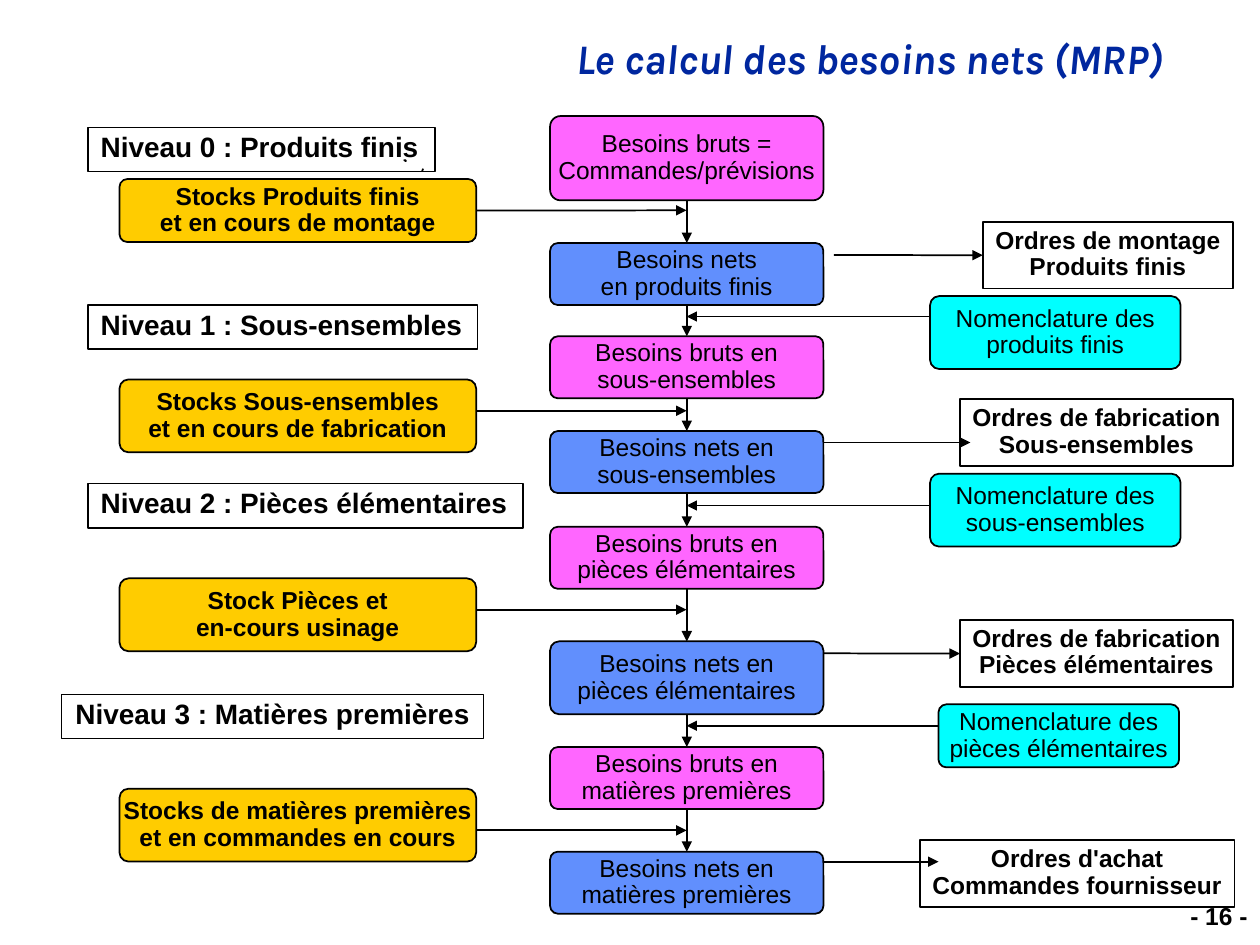
from dataclasses import dataclass
from itertools import pairwise
from typing import NamedTuple, Optional

from pptx import Presentation
from pptx.dml.color import RGBColor
from pptx.enum.shapes import MSO_CONNECTOR, MSO_SHAPE
from pptx.enum.text import MSO_ANCHOR, MSO_AUTO_SIZE, PP_ALIGN
from pptx.oxml.ns import qn
from pptx.shapes.autoshape import Shape
from pptx.shapes.connector import Connector
from pptx.slide import Slide
from pptx.text.text import TextFrame
from pptx.util import Cm, Pt
from lxml.etree import SubElement

BLACK = RGBColor(0, 0, 0)
NAVY = RGBColor(0x00, 0x27, 0x9F)
PINK = RGBColor(0xFF, 0x66, 0xFF)
BLUE = RGBColor(0x61, 0x8F, 0xFD)
GOLD = RGBColor(0xFF, 0xCC, 0x00)
CYAN = RGBColor(0x00, 0xFF, 0xFF)

TOP, LEFT, BOTTOM, RIGHT = range(4)
CHAIN_LEFT, CHAIN_WIDTH = 11.09, 5.51
CHAIN_MIDDLE = 13.84
CHAIN_RIGHT = 16.6
STOCK_LEFT, STOCK_WIDTH = 2.41, 7.19
JOIN_TOLERANCE = 0.02


@dataclass(frozen=True)
class Style:
    fill: Optional[RGBColor] = None
    size: int = 14
    bold: bool = False
    align: PP_ALIGN = PP_ALIGN.CENTER


GROSS = Style(PINK)
NET = Style(BLUE)
STOCK = Style(GOLD, bold=True)
BOM = Style(CYAN)
ORDER = Style(bold=True)
LEVEL = Style(size=16, bold=True, align=PP_ALIGN.LEFT)
LEVEL_CENTERED = Style(size=16, bold=True)


class Box(NamedTuple):
    text: str
    left: float
    top: float
    width: float
    height: float
    style: Style

    @property
    def right(self) -> float:
        return self.left + self.width

    @property
    def middle(self) -> float:
        return self.top + self.height / 2


class Step(NamedTuple):
    text: str
    top: float
    height: float = 1.25


class Link(NamedTuple):
    box: Box
    y: float
    x: float = CHAIN_MIDDLE


STEPS = [
    Step("Besoins bruts =\nCommandes/prévisions", 2.34, 1.7),
    Step("Besoins nets\nen produits finis", 4.9),
    Step("Besoins bruts en\nsous-ensembles", 6.78),
    Step("Besoins nets en\nsous-ensembles", 8.69),
    Step("Besoins bruts en\npièces élémentaires", 10.62),
    Step("Besoins nets en\npièces élémentaires", 12.93, 1.47),
    Step("Besoins bruts en\nmatières premières", 15.06),
    Step("Besoins nets en\nmatières premières", 17.17),
]

LEVELS = [
    Box("Niveau 0 : Produits finis", 1.78, 2.57, 6.99, 0.89, LEVEL),
    Box("Niveau 1 : Sous-ensembles", 1.78, 6.15, 7.85, 0.89, LEVEL),
    Box("Niveau 2 : Pièces élémentaires", 1.78, 9.75, 8.76, 0.89, LEVEL),
    Box("Niveau 3 : Matières premières", 1.24, 14, 8.51, 0.89, LEVEL_CENTERED),
]

STOCKS = [
    Link(Box(text, STOCK_LEFT, top, STOCK_WIDTH, height, STOCK), y)
    for text, top, height, y in [
        ("Stocks Produits finis\net en cours de montage", 3.61, 1.27, 4.24),
        ("Stocks Sous-ensembles\net en cours de fabrication", 7.65, 1.47, 8.28),
        ("Stock Pièces et\nen-cours usinage", 11.66, 1.47, 12.29),
        ("Stocks de matières premières\net en commandes en cours", 15.9, 1.47, 16.74),
    ]
]

BOMS = [
    Link(Box("Nomenclature des\nproduits finis", 18.75, 5.97, 5.05, 1.47, BOM), 6.38),
    Link(Box("Nomenclature des\nsous-ensembles", 18.75, 9.55, 5.05, 1.47, BOM), 10.19),
    Link(Box("Nomenclature des\npièces élémentaires", 18.92, 14.2, 4.85, 1.27, BOM), 14.63),
]

ORDERS = [
    Link(Box("Ordres de montage\nProduits finis", 19.81, 4.47, 5.05, 1.35, ORDER), 5.14, 16.81),
    Link(Box("Ordres de fabrication\nSous-ensembles", 19.35, 8.05, 5.51, 1.35, ORDER), 8.92, 19.56),
    Link(Box("Ordres de fabrication\nPièces élémentaires", 19.35, 12.5, 5.51, 1.35, ORDER), 13.17, CHAIN_RIGHT),
    Link(Box("Ordres d'achat\nCommandes fournisseur", 18.54, 16.94, 6.35, 1.35, ORDER), 17.37, 18.92),
]


def write(tf: TextFrame, text: str, size: int, align: PP_ALIGN, bold: bool = False,
          font: str = "Arial", color: RGBColor = BLACK, italic: bool = False) -> None:
    tf.text = text
    for p in tf.paragraphs:
        p.alignment = align
        p.line_spacing = 0.9
        for r in p.runs:
            r.font.name, r.font.size = font, Pt(size)
            r.font.bold, r.font.italic = bold, italic
            r.font.color.rgb = color


def outline(sp: Shape | Connector) -> None:
    sp.line.color.rgb = BLACK
    sp.line.width = Pt(1)


def draw_box(s: Slide, box: Box) -> Shape:
    style = box.style
    kind = MSO_SHAPE.ROUNDED_RECTANGLE if style.fill else MSO_SHAPE.RECTANGLE
    sp = s.shapes.add_shape(kind, Cm(box.left), Cm(box.top), Cm(box.width), Cm(box.height))
    sp.shadow.inherit = False
    outline(sp)
    tf = sp.text_frame
    tf.word_wrap = False
    if style.fill:
        sp.adjustments[0] = 0.125
        sp.fill.solid()
        sp.fill.fore_color.rgb = style.fill
        tf.vertical_anchor = MSO_ANCHOR.MIDDLE
    else:
        sp.fill.background()
        tf.vertical_anchor = MSO_ANCHOR.TOP
        tf.auto_size = MSO_AUTO_SIZE.SHAPE_TO_FIT_TEXT
    write(tf, box.text, style.size, style.align, style.bold)
    return sp


def draw_line(s: Slide, x1: float, y1: float, x2: float, y2: float, arrow: bool = True) -> Connector:
    line = s.shapes.add_connector(MSO_CONNECTOR.STRAIGHT, Cm(x1), Cm(y1), Cm(x2), Cm(y2))
    outline(line)
    if arrow:
        SubElement(line.line._get_or_add_ln(), qn("a:tailEnd"), type="triangle")
    SubElement(line._element.spPr, qn("a:effectLst"))
    return line


def draw_input(s: Slide, link: Link, side: int) -> None:
    sp = draw_box(s, link.box)
    edge = link.box.right if side == RIGHT else link.box.left
    arrow = draw_line(s, edge, link.y, link.x, link.y)
    if abs(link.y - link.box.middle) < JOIN_TOLERANCE:
        arrow.begin_connect(sp, side)


def draw_order(s: Slide, link: Link) -> None:
    sp = draw_box(s, link.box)
    joined = abs(link.y - link.box.middle) < JOIN_TOLERANCE
    start = link.x if joined else CHAIN_RIGHT
    arrow = draw_line(s, start, link.y, link.box.left if joined else link.x, link.y)
    if joined:
        arrow.end_connect(sp, LEFT)


def draw_label(s: Slide, left: float, top: float, width: float, height: float) -> TextFrame:
    tf = s.shapes.add_textbox(Cm(left), Cm(top), Cm(width), Cm(height)).text_frame
    tf.word_wrap = True
    return tf


def main() -> None:
    prs = Presentation()
    prs.slide_width, prs.slide_height = Cm(25.4), Cm(19.05)
    s = prs.slides.add_slide(prs.slide_layouts[6])
    write(draw_label(s, 3.18, 0.64, 20.52, 1.17), "Le calcul des besoins nets (MRP)", 24,
          PP_ALIGN.RIGHT, True, "Karla", NAVY, True)
    write(draw_label(s, 22.07, 18.11, 3.33, 0.79), "- 16 -", 14, PP_ALIGN.RIGHT, True)

    fb = s.shapes.build_freeform(Cm(8.15), Cm(3.23))
    fb.add_line_segments([(Cm(8.18), Cm(3.23)), (Cm(8.18), Cm(3.25))])
    speck = fb.convert_to_shape()
    speck.shadow.inherit = False
    speck.fill.background()
    outline(speck)
    draw_line(s, 8.51, 3.45, 8.53, 3.4, arrow=False)

    for level in LEVELS:
        draw_box(s, level)
    chain = [draw_box(s, Box(step.text, CHAIN_LEFT, step.top, CHAIN_WIDTH, step.height,
                             NET if i % 2 else GROSS)) for i, step in enumerate(STEPS)]
    for upper, lower in pairwise(chain):
        arrow = draw_line(s, CHAIN_MIDDLE, 0, CHAIN_MIDDLE, 1)
        arrow.begin_connect(upper, BOTTOM)
        arrow.end_connect(lower, TOP)
    for stock in STOCKS:
        draw_input(s, stock, RIGHT)
    for bom in BOMS:
        draw_input(s, bom, LEFT)
    for order in ORDERS:
        draw_order(s, order)
    prs.save("out.pptx")


if __name__ == "__main__":
    main()
